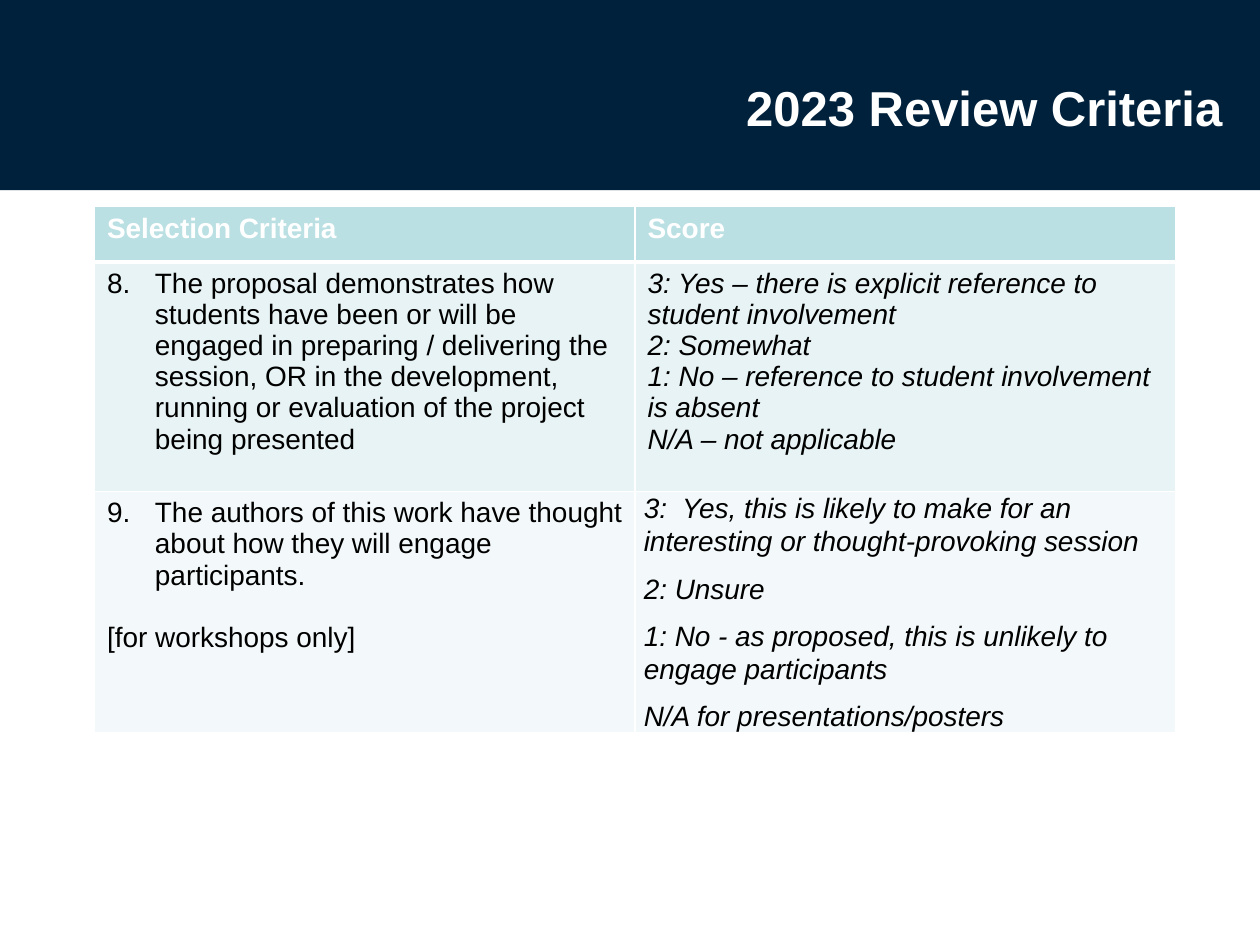
from dataclasses import dataclass
from typing import Optional

from lxml.etree import SubElement
from pptx import Presentation
from pptx.dml.color import RGBColor
from pptx.enum.shapes import MSO_SHAPE
from pptx.enum.text import MSO_ANCHOR, MSO_AUTO_SIZE, PP_ALIGN
from pptx.oxml.ns import qn
from pptx.util import Inches, Pt


@dataclass(frozen=True)
class Theme:
    font: str = "Arial"
    title_size: int = 28
    body_size: int = 16
    navy: str = "00213B"
    white: str = "FFFFFF"
    black: str = "000000"
    header_fill: str = "BBE0E3"
    row_fills: tuple[str, ...] = ("E7F3F4", "F3F9FA")
    thin_rule: float = 1
    header_rule: float = 3


@dataclass(frozen=True)
class Line:
    text: str
    number: Optional[int] = None
    italic: bool = False
    space_before: float = 0
    space_after: float = 0
    line_spacing: Optional[float] = None


@dataclass(frozen=True)
class Criterion:
    criteria: list[Line]
    scores: list[Line]
    height: float
    tight: bool = False


THEME = Theme()
HEADINGS = ("Selection Criteria", "Score")
HEADER_HEIGHT = 0.44
COLUMN_WIDTH = 4.29


def score(text: str) -> Line:
    return Line(text, italic=True)


def spaced_score(text: str) -> Line:
    return Line(text, italic=True, space_after=8, line_spacing=1.07)


CRITERIA = [
    Criterion(
        [Line("The proposal demonstrates how students have been or will be engaged in "
              "preparing / delivering the session, OR in the development, running or "
              "evaluation of the project being presented", number=8)],
        [score("3: Yes – there is explicit reference to student involvement"),
         score("2: Somewhat"),
         score("1: No – reference to student involvement is absent"),
         score("N/A – not applicable")],
        height=1.82),
    Criterion(
        [Line("The authors of this work have thought about how they will engage "
              "participants.", number=9),
         Line("[for workshops only]", space_before=18)],
        [spaced_score("3:  Yes, this is likely to make for an interesting or "
                      "thought-provoking session"),
         spaced_score("2: Unsure"),
         spaced_score("1: No - as proposed, this is unlikely to engage participants"),
         spaced_score("N/A for presentations/posters")],
        height=1.92, tight=True),
]


def color(value: str) -> RGBColor:
    return RGBColor.from_string(value)


def style_font(para, size: int, value: str, bold: bool = False, italic: bool = False) -> None:
    font = para.font
    font.name, font.size = THEME.font, Pt(size)
    font.bold, font.italic = bold, italic
    font.color.rgb = color(value)


def number_paragraph(para, start: int) -> None:
    """Give the paragraph a hanging automatic number."""
    properties = para._p.get_or_add_pPr()
    properties.set("marL", str(Inches(0.38)))
    properties.set("indent", str(-Inches(0.38)))
    SubElement(properties, qn("a:buAutoNum"), type="arabicPeriod", startAt=str(start))


def draw_borders(cell, top: float, bottom: float) -> None:
    widths = {"L": THEME.thin_rule, "R": THEME.thin_rule, "T": top, "B": bottom}
    properties = cell._tc.get_or_add_tcPr()
    for side, width in widths.items():
        rule = SubElement(properties, qn(f"a:ln{side}"), w=str(Pt(width)))
        SubElement(SubElement(rule, qn("a:solidFill")), qn("a:srgbClr"), val=THEME.white)


def fill_cell(cell, lines: list[Line], fill: str, text_color: str, bold: bool = False,
              top: float = THEME.thin_rule, bottom: float = THEME.thin_rule) -> None:
    draw_borders(cell, top, bottom)
    cell.fill.solid()
    cell.fill.fore_color.rgb = color(fill)
    frame = cell.text_frame
    for index, line in enumerate(lines):
        para = frame.add_paragraph() if index else frame.paragraphs[0]
        para.text = line.text
        if line.number is not None:
            number_paragraph(para, line.number)
        if line.line_spacing:
            para.line_spacing = line.line_spacing
        para.space_before, para.space_after = Pt(line.space_before), Pt(line.space_after)
        style_font(para, THEME.body_size, text_color, bold, line.italic)


def add_title(page) -> None:
    title = page.shapes.title
    title.left, title.top = Inches(1.3), Inches(0.04)
    title.width, title.height = Inches(8.5), Inches(1.61)
    frame = title.text_frame
    frame.text = "2023 Review Criteria"
    frame.auto_size = MSO_AUTO_SIZE.NONE
    frame.vertical_anchor = MSO_ANCHOR.MIDDLE
    para = frame.paragraphs[0]
    para.alignment = PP_ALIGN.RIGHT
    style_font(para, THEME.title_size, THEME.white, bold=True)

    # Navy band, placed behind the title
    band = page.shapes.add_shape(MSO_SHAPE.RECTANGLE, 0, 0, Inches(10), Inches(1.51))
    band.shadow.inherit = False
    band.fill.solid()
    band.fill.fore_color.rgb = color(THEME.navy)
    band.line.fill.background()
    title.element.addprevious(band.element)


def add_criteria_table(page) -> None:
    heights = [HEADER_HEIGHT] + [criterion.height for criterion in CRITERIA]
    table = page.shapes.add_table(
        len(heights), len(HEADINGS), Inches(0.75), Inches(1.64),
        Inches(COLUMN_WIDTH * len(HEADINGS)), Inches(sum(heights))).table
    for column in table.columns:
        column.width = Inches(COLUMN_WIDTH)
    for row, height in zip(table.rows, heights):
        row.height = Inches(height)

    # Header row
    for column, heading in enumerate(HEADINGS):
        fill_cell(table.cell(0, column), [Line(heading)], THEME.header_fill,
                  THEME.white, bold=True, bottom=THEME.header_rule)

    # Criterion rows
    for row, (criterion, fill) in enumerate(zip(CRITERIA, THEME.row_fills), start=1):
        top = THEME.header_rule if row == 1 else THEME.thin_rule
        for column, lines in enumerate((criterion.criteria, criterion.scores)):
            fill_cell(table.cell(row, column), lines, fill, THEME.black, top=top)
        if criterion.tight:
            cell = table.cell(row, 1)
            cell.margin_left = cell.margin_right = Inches(0.07)
            cell.margin_top = cell.margin_bottom = 0


def main() -> None:
    deck = Presentation()
    deck.slide_width, deck.slide_height = Inches(10), Inches(7.5)
    page = deck.slides.add_slide(deck.slide_layouts[5])
    add_title(page)
    add_criteria_table(page)
    deck.save("out.pptx")


if __name__ == "__main__":
    main()
